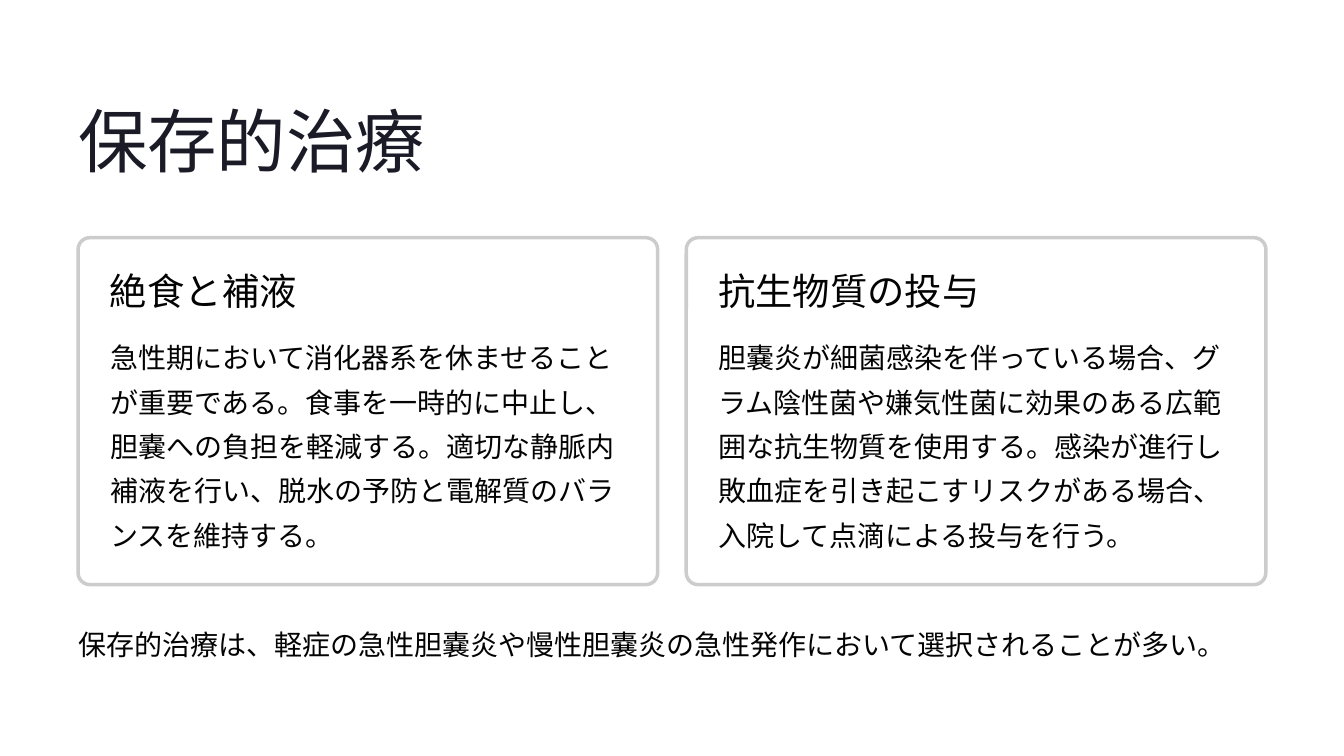
from dataclasses import dataclass

from lxml.etree import SubElement
from pptx import Presentation
from pptx.dml.color import RGBColor
from pptx.enum.shapes import MSO_SHAPE as Preset
from pptx.enum.text import MSO_ANCHOR as Anchor, MSO_AUTO_SIZE as AutoSize, PP_ALIGN as Align
from pptx.oxml.ns import qn
from pptx.util import Emu, Pt

PX = 9144  # EMU in one px: 100 px to the inch
COLORS = {"title": "1B1B27", "text": "030303", "card": "FFFFFF", "border": "CCCCCC"}

MARGIN, CARD_TOP, CARD_WIDTH, CARD_HEIGHT, CARD_GAP = 93, 283, 690, 413, 34
PADDING = 38


@dataclass(frozen=True)
class TextStyle:
    font: str
    size: float
    line_height: float
    color: str
    wrap: bool = False


@dataclass(frozen=True)
class Card:
    heading: str
    body: str


TITLE = TextStyle("Inter", 59.5, 74.5, "title")
HEADING = TextStyle("Inter", 32, 37, "text")
BODY = TextStyle("Karla", 24, 38, "text", wrap=True)
SUMMARY = TextStyle("Karla", 24, 38, "text")

CARDS = [
    Card("絶食と補液",
         "急性期において消化器系を休ませることが重要である。食事を一時的に中止し、"
         "胆嚢への負担を軽減する。適切な静脈内補液を行い、脱水の予防と電解質のバランスを維持する。"),
    Card("抗生物質の投与",
         "胆嚢炎が細菌感染を伴っている場合、グラム陰性菌や嫌気性菌に効果のある広範囲な抗生物質を使用する。"
         "感染が進行し敗血症を引き起こすリスクがある場合、入院して点滴による投与を行う。"),
]


def px(*lengths: int) -> list[Emu]:
    return [Emu(length * PX) for length in lengths]


def rgb(name: str) -> RGBColor:
    return RGBColor.from_string(COLORS[name])


def set_all(target, values: dict) -> None:
    for name, value in values.items():
        setattr(target, name, value)


def write(box, text: str, style: TextStyle) -> None:
    frame = box.text_frame
    set_all(frame, {
        "margin_left": 0, "margin_top": 0, "margin_right": 0, "margin_bottom": 0,
        "word_wrap": style.wrap, "auto_size": AutoSize.NONE, "vertical_anchor": Anchor.TOP,
    })
    para = frame.paragraphs[0]
    set_all(para, {"alignment": Align.LEFT, "line_spacing": Pt(style.line_height)})
    span = para.add_run()
    span.text = text
    set_all(span.font, {"name": style.font, "size": Pt(style.size)})
    span.font.color.rgb = rgb(style.color)


def add_text(page, left: int, top: int, width: int, height: int,
             text: str, style: TextStyle) -> None:
    write(page.shapes.add_textbox(*px(left, top, width, height)), text, style)


def add_card(page, left: int, card: Card) -> None:
    panel = page.shapes.add_shape(
        Preset.ROUNDED_RECTANGLE, *px(left, CARD_TOP, CARD_WIDTH, CARD_HEIGHT))
    panel.shadow.inherit = False
    panel.adjustments[0] = 0.034
    panel.fill.solid()
    panel.fill.fore_color.rgb = rgb("card")
    fill_color = panel.fill._xPr.find(qn("a:solidFill"))[0]
    SubElement(fill_color, qn("a:alpha"), val="95000")
    panel.line.color.rgb = rgb("border")
    panel.line.width = Pt(3)
    text_left, text_top = left + PADDING, CARD_TOP + PADDING
    add_text(page, text_left, text_top, 416, 52, card.heading, HEADING)
    add_text(page, text_left, text_top + 72, 615, 266, card.body, BODY)


def main() -> None:
    deck = Presentation()
    deck.slide_width, deck.slide_height = px(1600, 900)
    page = deck.slides.add_slide(deck.slide_layouts[5])

    title = page.shapes.title
    left, top, width, height = px(MARGIN, 113, 832, 104)
    set_all(title, {"left": left, "top": top, "width": width, "height": height})
    write(title, "保存的治療", TITLE)

    for index, card in enumerate(CARDS):
        add_card(page, MARGIN + index * (CARD_WIDTH + CARD_GAP), card)

    add_text(page, MARGIN, 734, 1414, 53,
             "保存的治療は、軽症の急性胆嚢炎や慢性胆嚢炎の急性発作において選択されることが多い。", SUMMARY)
    deck.save("out.pptx")


if __name__ == "__main__":
    main()
